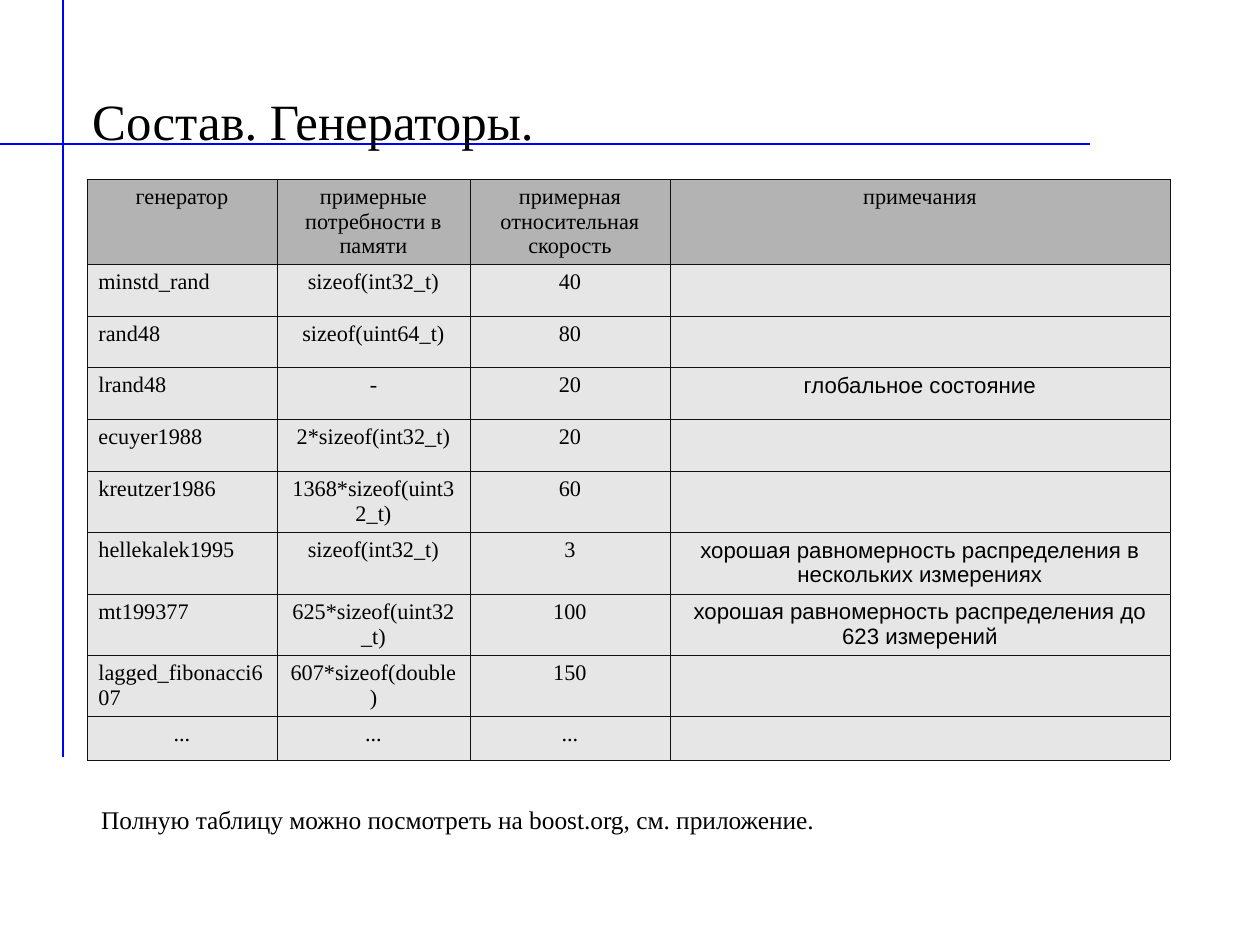
from dataclasses import dataclass

from lxml.etree import SubElement
from pptx import Presentation
from pptx.dml.color import RGBColor
from pptx.enum.shapes import MSO_CONNECTOR
from pptx.enum.text import MSO_ANCHOR, PP_ALIGN
from pptx.oxml.ns import qn
from pptx.util import Emu, Pt


@dataclass(frozen=True)
class Theme:
    ink: str = "000000"
    rule: str = "0000FF"
    border: str = "111111"
    header_fill: str = "B3B3B3"
    body_fill: str = "E6E6E6"
    serif: str = "Times New Roman"
    sans: str = "Arial"
    title_size: int = 32
    caption_size: int = 16
    table_size: int = 14
    rule_width: float = 0.75
    border_width: float = 0.06


THEME = Theme()
EMU_PER_PX = 8000
COLUMN_WIDTHS = [190, 193, 200, 500]
ROW_HEIGHTS = [85, 52, 51, 52, 52, 61, 62, 61, 60, 44]
NAME_COLUMN, NOTES_COLUMN = 0, 3
GENERATORS = [
    ("генератор", "примерные потребности в памяти",
     "примерная относительная скорость", "примечания"),
    ("minstd_rand", "sizeof(int32_t)", "40", ""),
    ("rand48", "sizeof(uint64_t)", "80", ""),
    ("lrand48", "-", "20", "глобальное состояние"),
    ("ecuyer1988", "2*sizeof(int32_t)", "20", ""),
    ("kreutzer1986", "1368*sizeof(uint32_t)", "60", ""),
    ("hellekalek1995", "sizeof(int32_t)", "3",
     "хорошая равномерность распределения в нескольких измерениях"),
    ("mt199377", "625*sizeof(uint32_t)", "100",
     "хорошая равномерность распределения до 623 измерений"),
    ("lagged_fibonacci607", "607*sizeof(double)", "150", ""),
    ("...", "...", "...", ""),
]


def px(length):
    return Emu(length * EMU_PER_PX)


def add_span(para, text, size, font):
    span = para.add_run()
    span.text = text
    span.font.size = Pt(size)
    span.font.name = font
    span.font.color.rgb = RGBColor.from_string(THEME.ink)


def add_text(page, left, top, width, height, text, size, line_spacing=1.0):
    box = page.shapes.add_textbox(px(left), px(top), px(width), px(height))
    box.text_frame.word_wrap = True
    box.text_frame.vertical_anchor = MSO_ANCHOR.TOP
    para = box.text_frame.paragraphs[0]
    para.line_spacing = line_spacing
    add_span(para, text, size, THEME.serif)


def add_rule(page, start_x, start_y, end_x, end_y):
    rule = page.shapes.add_connector(
        MSO_CONNECTOR.STRAIGHT, px(start_x), px(start_y), px(end_x), px(end_y))
    rule.line.color.rgb = RGBColor.from_string(THEME.rule)
    rule.line.width = Pt(THEME.rule_width)
    SubElement(rule._element.spPr, qn("a:effectLst"))


def add_borders(cell):
    properties = cell._tc.get_or_add_tcPr()
    for position, side in enumerate(("a:lnL", "a:lnR", "a:lnT", "a:lnB")):
        line = SubElement(properties, qn(side), w=str(Pt(THEME.border_width)))
        fill = SubElement(line, qn("a:solidFill"))
        SubElement(fill, qn("a:srgbClr"), val=THEME.border)
        properties.insert(position, line)


def fill_cell(cell, text, font, alignment, fill):
    cell.fill.solid()
    cell.fill.fore_color.rgb = RGBColor.from_string(fill)
    add_borders(cell)
    para = cell.text_frame.paragraphs[0]
    para.alignment = alignment
    if text:
        add_span(para, text, THEME.table_size, font)
    else:
        SubElement(para._p, qn("a:endParaRPr"), sz=str(THEME.table_size * 100))


def add_generator_table(page, left, top):
    table = page.shapes.add_table(
        len(GENERATORS), len(COLUMN_WIDTHS), px(left), px(top),
        px(sum(COLUMN_WIDTHS)), px(sum(ROW_HEIGHTS))).table
    table.horz_banding = False
    for column, width in zip(table.columns, COLUMN_WIDTHS):
        column.width = px(width)
    for row, height in zip(table.rows, ROW_HEIGHTS):
        row.height = px(height)
    last_row = len(GENERATORS) - 1
    for row_index, values in enumerate(GENERATORS):
        is_header = row_index == 0
        fill = THEME.header_fill if is_header else THEME.body_fill
        for column_index, text in enumerate(values):
            is_name = column_index == NAME_COLUMN and 0 < row_index < last_row
            is_note = column_index == NOTES_COLUMN and not is_header
            fill_cell(
                table.cell(row_index, column_index), text,
                THEME.sans if is_note else THEME.serif,
                PP_ALIGN.LEFT if is_name else PP_ALIGN.CENTER, fill)


def main():
    deck = Presentation()
    deck.slide_width, deck.slide_height = px(1260), px(945)
    page = deck.slides.add_slide(deck.slide_layouts[6])
    add_rule(page, 0, 144, 1090, 144)
    add_rule(page, 63, 757, 63, 0)
    add_generator_table(page, 87, 179)
    add_text(page, 81, 84, 504, 67, "Состав. Генераторы.", THEME.title_size)
    add_text(page, 90, 783, 1080, 60,
             "Полную таблицу можно посмотреть на boost.org, см. приложение.",
             THEME.caption_size, line_spacing=1.5)
    deck.save("out.pptx")


if __name__ == "__main__":
    main()
